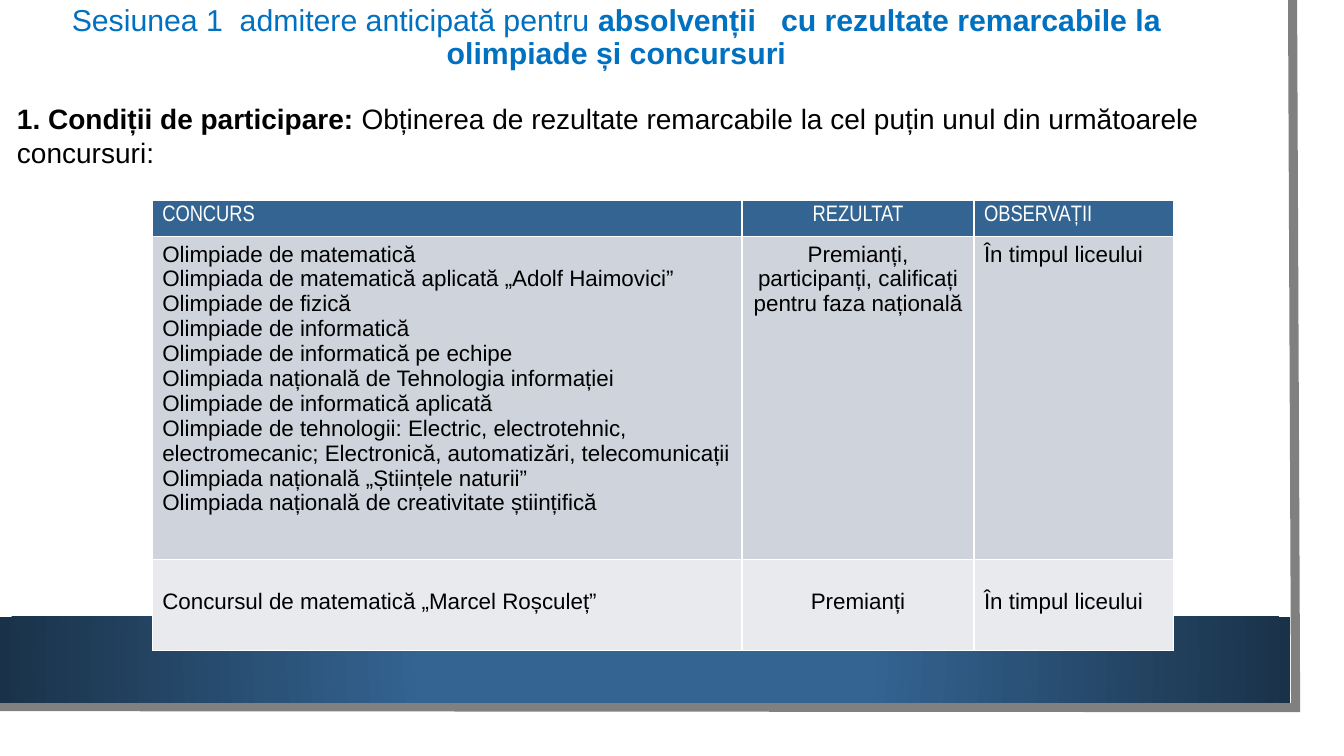
from lxml import etree
from pptx import Presentation
from pptx.dml.color import RGBColor
from pptx.enum import shapes, text
from pptx.oxml import parse_xml
from pptx.oxml.ns import nsdecls, qn
from pptx.util import Inches, Pt

BLUE = RGBColor(0x00, 0x70, 0xC0)
BLACK = RGBColor(0x00, 0x00, 0x00)
WHITE = RGBColor(0xFF, 0xFF, 0xFF)
GRAY = RGBColor(0x80, 0x80, 0x80)
HEADER = RGBColor(0x34, 0x64, 0x92)
NAVY = RGBColor(0x1A, 0x32, 0x49)
ROW_DARK = RGBColor(0xCE, 0xD3, 0xDC)
ROW_LIGHT = RGBColor(0xE8, 0xEA, 0xEE)
LEFT, CENTER = text.PP_ALIGN.LEFT, text.PP_ALIGN.CENTER

CONTESTS = [
    "Olimpiade de matematică",
    "Olimpiada de matematică aplicată „Adolf Haimovici”",
    "Olimpiade de fizică",
    "Olimpiade de informatică",
    "Olimpiade de informatică pe echipe",
    "Olimpiada națională de Tehnologia informației",
    "Olimpiade de informatică aplicată",
    "Olimpiade de tehnologii: Electric, electrotehnic, "
    "electromecanic; Electronică, automatizări, telecomunicații",
    "Olimpiada națională „Științele naturii”",
    "Olimpiada națională de creativitate științifică",
]
ROWS = [
    (["CONCURS"], ["REZULTAT"], ["OBSERVAȚII"]),
    (CONTESTS, ["Premianți, participanți, calificați pentru faza națională"],
     ["În timpul liceului"]),
    (["Concursul de matematică „Marcel Roșculeț”"], ["Premianți"],
     ["În timpul liceului"]),
]
ROW_STYLES = [
    (0.36, HEADER, 0.05, "Arial Narrow", WHITE),
    (3.2, ROW_DARK, 0.05, "Arial", BLACK),
    (0.9, ROW_LIGHT, 0.3, "Arial", BLACK),
]
COLUMNS = [(5.85, LEFT), (2.3, CENTER), (1.98, LEFT)]


def write(p, content, size=16, font="Arial", color=BLACK, bold=False, align=LEFT):
    p.alignment = align
    r = p.add_run()
    r.text = content
    r.font.size = Pt(size)
    r.font.name = font
    r.font.bold = bold
    r.font.color.rgb = color


def add_text(s, box, runs, anchor=text.MSO_ANCHOR.TOP, spacing=1.0, **style):
    tf = s.shapes.add_textbox(*map(Inches, box)).text_frame
    tf.word_wrap = True
    tf.vertical_anchor = anchor
    p = tf.paragraphs[0]
    p.line_spacing = spacing
    for content, bold in runs:
        write(p, content, bold=bold, **style)


def add_frame(s):
    fb = s.shapes.build_freeform(Inches(12.82), 0)
    fb.add_line_segments([(Inches(12.85), Inches(7.02)),
                          (Inches(-0.03), Inches(7.01))], close=False)
    sp = fb.convert_to_shape()
    sp.shadow.inherit = False
    sp.fill.background()
    sp.line.color.rgb = GRAY
    sp.line.width = Pt(6.5)
    ln = sp._element.spPr.find(qn("a:ln"))
    etree.SubElement(ln, qn("a:miter"), lim="800000")


def add_band(s):
    sp = s.shapes.add_shape(shapes.MSO_SHAPE.RECTANGLE, 0, Inches(6.12),
                            Inches(12.8), Inches(0.85))
    sp.shadow.inherit = False
    sp.line.fill.background()
    gradient = parse_xml(
        f'<a:gradFill {nsdecls("a")}><a:gsLst>'
        f'<a:gs pos="34000"><a:srgbClr val="{HEADER}"/></a:gs>'
        f'<a:gs pos="100000"><a:srgbClr val="{NAVY}"/></a:gs></a:gsLst>'
        '<a:path path="circle"><a:fillToRect l="50000" t="50000" r="50000" b="50000"/>'
        '</a:path></a:gradFill>')
    sp._element.spPr.find(qn("a:prstGeom")).addnext(gradient)


def set_borders(cell):
    tc_pr = cell._tc.get_or_add_tcPr()
    for i, side in enumerate(("lnL", "lnR", "lnT", "lnB")):
        ln = etree.Element(qn(f"a:{side}"), w=str(Pt(1)))
        fill = etree.SubElement(ln, qn("a:solidFill"))
        etree.SubElement(fill, qn("a:srgbClr"), val=str(WHITE))
        tc_pr.insert(i, ln)


def fill_cell(cell, lines, fill, top, **style):
    cell.fill.solid()
    cell.fill.fore_color.rgb = fill
    cell.margin_top = Inches(top)
    cell.margin_bottom = 0
    cell.vertical_anchor = text.MSO_ANCHOR.TOP
    set_borders(cell)
    tf = cell.text_frame
    for i, line in enumerate(lines):
        p = tf.add_paragraph() if i else tf.paragraphs[0]
        write(p, line, **style)


def add_contest_table(s):
    table = s.shapes.add_table(len(ROWS), len(COLUMNS), Inches(1.51), Inches(1.99),
                               Inches(10.13), Inches(4.46)).table
    for column, (width, _) in zip(table.columns, COLUMNS):
        column.width = Inches(width)
    for i, (cells, row_style) in enumerate(zip(ROWS, ROW_STYLES)):
        height, fill, top, font, color = row_style
        table.rows[i].height = Inches(height)
        for j, (lines, (_, align)) in enumerate(zip(cells, COLUMNS)):
            fill_cell(table.cell(i, j), lines, fill, top,
                      font=font, color=color, align=align)


def main():
    prs = Presentation()
    prs.slide_width = Inches(13.33)
    prs.slide_height = Inches(7.5)
    s = prs.slides.add_slide(prs.slide_layouts[6])
    add_frame(s)
    add_band(s)
    add_text(s, (0.43, 0.06, 11.37, 0.64),
             [("Sesiunea 1  admitere anticipată pentru ", False),
              ("absolvenții   cu rezultate remarcabile la olimpiade și concursuri", True)],
             anchor=text.MSO_ANCHOR.MIDDLE, spacing=0.9,
             size=21.6, color=BLUE, align=CENTER)
    add_text(s, (0.07, 0.96, 12.74, 0.77),
             [("1. Condiții de participare: ", True),
              ("Obținerea de rezultate remarcabile la cel puțin unul din "
               "următoarele concursuri:", False)],
             size=20)
    add_contest_table(s)
    prs.save("out.pptx")


if __name__ == "__main__":
    main()
